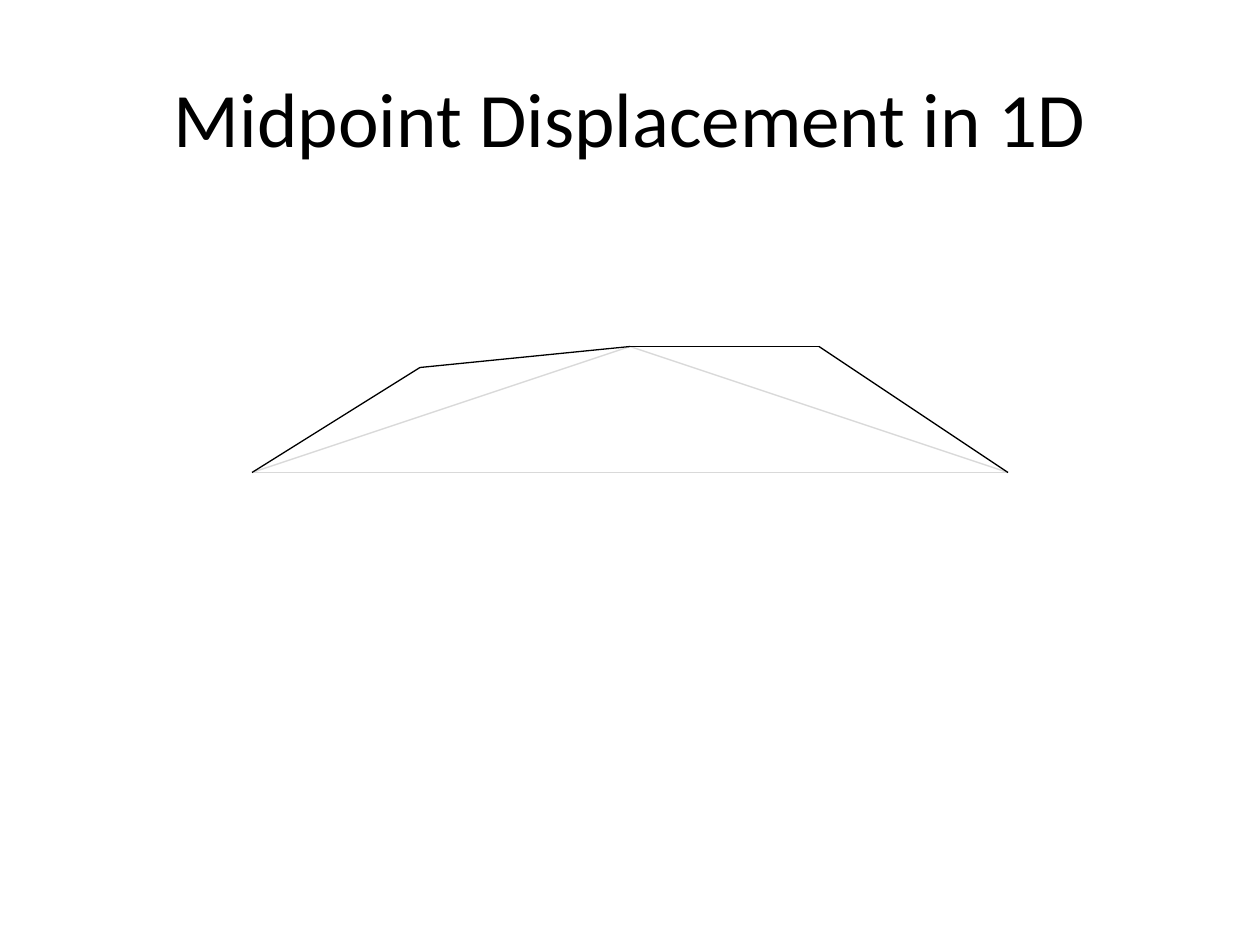
from itertools import pairwise

from lxml.etree import SubElement
from pptx import Presentation
from pptx.dml.color import RGBColor
from pptx.enum.shapes import MSO_CONNECTOR
from pptx.enum.text import MSO_ANCHOR, PP_ALIGN
from pptx.oxml.ns import qn
from pptx.util import Emu, Pt

EMU_PER_PX = 9525
COLORS = {"text": "000000", "current": "000000", "previous": "D9D9D9"}


def px(n):
    return Emu(n * EMU_PER_PX)


def assign(obj, values):
    for name, value in values.items():
        setattr(obj, name, value)


class SlideBuilder:
    font = {"name": "Calibri", "size": Pt(44), "bold": False}
    line_width = Pt(0.75)

    def __init__(self, prs):
        self.s = prs.slides.add_slide(prs.slide_layouts[5])

    def color(self, name):
        return RGBColor.from_string(COLORS[name])

    def title(self, text, left, top, width, height):
        sp = self.s.shapes.title
        assign(sp, {"left": px(left), "top": px(top),
                    "width": px(width), "height": px(height)})
        tf = sp.text_frame
        assign(tf, {"word_wrap": True, "vertical_anchor": MSO_ANCHOR.MIDDLE})
        p = tf.paragraphs[0]
        p.alignment = PP_ALIGN.CENTER
        r = p.add_run()
        r.text = text
        assign(r.font, self.font)
        r.font.color.rgb = self.color("text")

    def line(self, start, end, color):
        sp = self.s.shapes.add_connector(
            MSO_CONNECTOR.STRAIGHT, *map(px, start + end))
        sp.line.color.rgb = self.color(color)
        sp.line.width = self.line_width
        SubElement(sp._element.spPr, qn("a:effectLst"))

    def profile(self, points, color):
        for start, end in pairwise(points):
            self.line(start, end, color)


def main():
    prs = Presentation()
    assign(prs, {"slide_width": px(960), "slide_height": px(720)})
    slide = SlideBuilder(prs)
    slide.title("Midpoint Displacement in 1D", 48, 29, 864, 120)

    left, peak, right = (192, 360), (480, 264), (768, 360)
    slide.profile([left, right], "previous")
    slide.profile([left, peak, right], "previous")
    slide.profile([left, (320, 280), peak, (624, 264), right], "current")
    prs.save("out.pptx")


if __name__ == "__main__":
    main()
